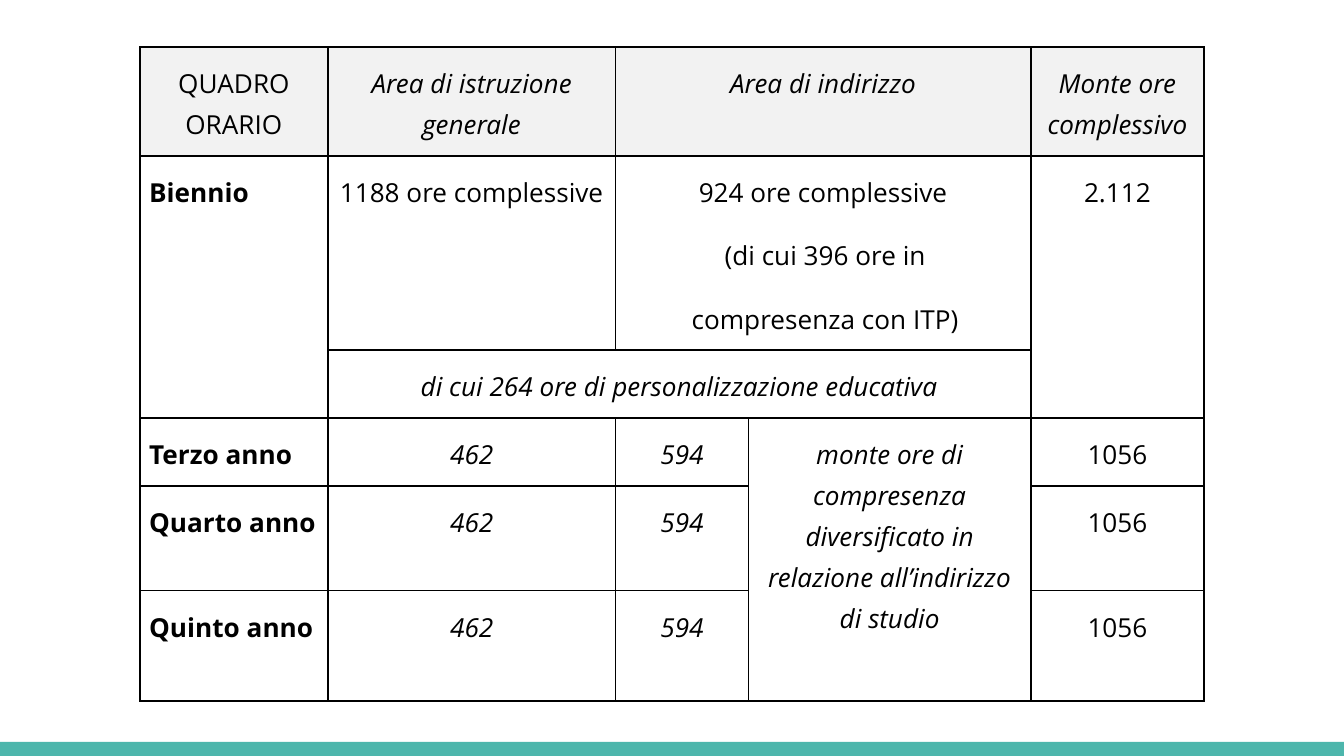
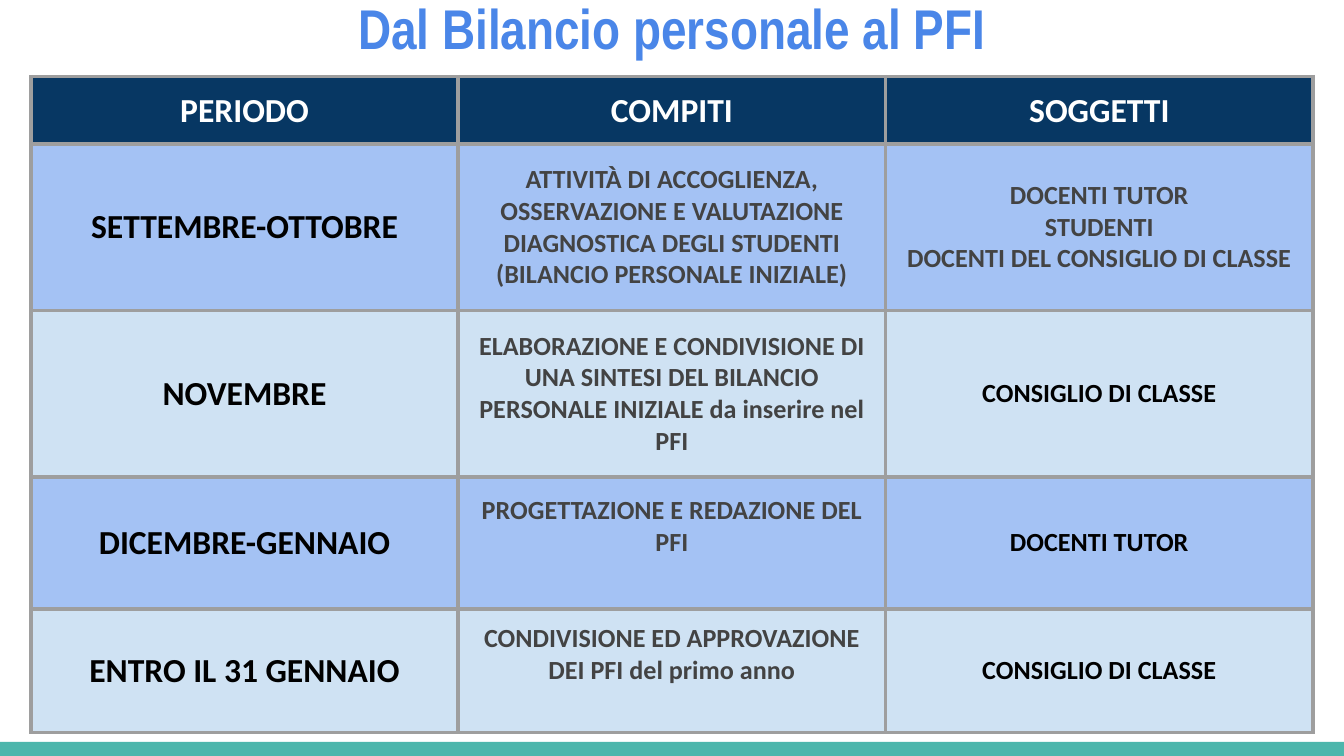
import pptx
import pptx.dml.color
import pptx.enum.shapes
import pptx.enum.text
import pptx.oxml
import pptx.oxml.ns
import pptx.util
from lxml import etree

Inches = pptx.util.Inches
Pt = pptx.util.Pt
PP_ALIGN = pptx.enum.text.PP_ALIGN
MSO_ANCHOR = pptx.enum.text.MSO_ANCHOR

BLACK = "000000"
WHITE = "FFFFFF"
TEAL = "4DB6AC"
TITLE_BLUE = "4A86E8"
NAVY = "073763"
GREY_TEXT = "434343"
GREY_LINE = "9E9E9E"
HEADER_GREY = "F2F2F2"
ROW_TINTS = ["A4C2F4", "CFE2F3"]
LINE_14PT = 0.24

HOURS_COLUMNS = [1.4, 2.14, 0.99, 2.1, 1.29]
HOURS_ROWS = [0.78, 1.41, 0.49, 0.49, 0.78, 0.82]
HOURS_MERGES = [(0, 2, 0, 3), (1, 0, 2, 0), (1, 2, 1, 3), (1, 4, 2, 4), (2, 1, 2, 3), (3, 3, 5, 3)]
HOURS_HEADERS = {
    0: "QUADRO ORARIO",
    1: "Area di istruzione generale",
    2: "Area di indirizzo",
    4: "Monte ore complessivo",
}
HOURS_BIENNIO = {
    0: "Biennio",
    1: "1188 ore complessive",
    2: "924 ore complessive\n(di cui 396 ore in\ncompresenza con ITP)",
    4: "2.112",
}
YEARS = ["Terzo anno", "Quarto anno", "Quinto anno"]
SHARED_HOURS = "monte ore di compresenza diversificato in relazione all’indirizzo di studio"

PLAN_ROWS = [0.37, 1.24, 1.24, 0.98, 0.92]
PLAN_HEADERS = ["PERIODO", "COMPITI", "SOGGETTI"]
PLAN = [
    (
        "SETTEMBRE-OTTOBRE",
        "ATTIVITÀ DI ACCOGLIENZA, OSSERVAZIONE E VALUTAZIONE DIAGNOSTICA DEGLI STUDENTI\n"
        "(BILANCIO PERSONALE INIZIALE)",
        "DOCENTI TUTOR\nSTUDENTI\nDOCENTI DEL CONSIGLIO DI CLASSE",
    ),
    (
        "NOVEMBRE",
        "ELABORAZIONE E CONDIVISIONE DI UNA SINTESI DEL BILANCIO PERSONALE INIZIALE da inserire nel PFI",
        "CONSIGLIO DI CLASSE",
    ),
    ("DICEMBRE-GENNAIO", "PROGETTAZIONE E REDAZIONE DEL PFI", "DOCENTI TUTOR"),
    (
        "ENTRO IL 31 GENNAIO",
        "CONDIVISIONE ED APPROVAZIONE DEI PFI del primo anno",
        "CONSIGLIO DI CLASSE",
    ),
]


def rgb(color):
    return pptx.dml.color.RGBColor.from_string(color)


def write(frame, text, font="Calibri", size=14, color=BLACK, bold=False, italic=False,
          align=PP_ALIGN.CENTER, spacing=1.0, gap=0, indent=0):
    for index, line in enumerate(text.split("\n")):
        paragraph = frame.add_paragraph() if index else frame.paragraphs[0]
        paragraph.alignment = align
        paragraph.line_spacing = spacing
        paragraph.space_before = Pt(gap if index else 0)
        if index and indent:
            paragraph._p.get_or_add_pPr().set("indent", str(Inches(indent)))
        run = paragraph.add_run()
        run.text = line
        run.font.name = font
        run.font.size = Pt(size)
        run.font.bold = bold
        run.font.italic = italic
        run.font.color.rgb = rgb(color)


def add_slide(deck):
    slide = deck.slides.add_slide(deck.slide_layouts[6])
    band = slide.shapes.add_shape(
        pptx.enum.shapes.MSO_SHAPE.RECTANGLE, 0, Inches(5.52), deck.slide_width, Inches(0.11))
    band.shadow.inherit = False
    band.fill.solid()
    band.fill.fore_color.rgb = rgb(TEAL)
    band.line.fill.background()
    return slide


def add_title(slide, text):
    title = slide.shapes.add_textbox(Inches(0.34), Inches(-0.09), Inches(9.32), Inches(0.57))
    frame = title.text_frame
    frame.word_wrap = True
    frame.margin_top = frame.margin_bottom = Inches(0.1)
    write(frame, text, font="Arial Narrow", size=30, color=TITLE_BLUE, bold=True, spacing=0.9)


def add_borders(cell, color, width):
    properties = cell._tc.get_or_add_tcPr()
    for side in ("a:lnL", "a:lnR", "a:lnT", "a:lnB"):
        edge = etree.SubElement(properties, pptx.oxml.ns.qn(side), w=str(Pt(width)))
        fill = etree.SubElement(edge, pptx.oxml.ns.qn("a:solidFill"))
        etree.SubElement(fill, pptx.oxml.ns.qn("a:srgbClr"), val=color)


def add_grid(slide, left, top, columns, rows, border, merges=(), side_margin=0.1):
    table = slide.shapes.add_table(
        len(rows), len(columns), Inches(left), Inches(top),
        Inches(sum(columns)), Inches(sum(rows))).table
    table.first_row = table.horz_banding = False
    for column, width in zip(table.columns, columns):
        column.width = Inches(width)
    for row, height in zip(table.rows, rows):
        row.height = Inches(height)
    for first_row, first_column, last_row, last_column in merges:
        table.cell(first_row, first_column).merge(table.cell(last_row, last_column))
    for cell in table.iter_cells():
        cell.margin_left = cell.margin_right = Inches(side_margin)
        cell.margin_top = cell.margin_bottom = Inches(0.1)
        if not cell.is_spanned:
            add_borders(cell, *border)
        cell.fill.background()
    return table


def tint(cell, color):
    cell.fill.solid()
    cell.fill.fore_color.rgb = rgb(color)


def build_hours(deck):
    table = add_grid(add_slide(deck), 1.04, 0.35, HOURS_COLUMNS, HOURS_ROWS,
                     (BLACK, 1), HOURS_MERGES, side_margin=0.07)

    def put(row, column, text, **style):
        write(table.cell(row, column).text_frame, text, font="Open Sans", spacing=1.15, **style)

    def put_label(row, text):
        put(row, 0, text, bold=True, align=PP_ALIGN.LEFT)

    for column, text in HOURS_HEADERS.items():
        put(0, column, text, italic=column > 0)
        tint(table.cell(0, column), HEADER_GREY)
    for column, text in HOURS_BIENNIO.items():
        if column:
            put(1, column, text, gap=12, indent=0.03)
        else:
            put_label(1, text)
    put(2, 1, "di cui 264 ore di personalizzazione educativa", italic=True)
    for row, year in enumerate(YEARS, start=3):
        put_label(row, year)
        put(row, 1, "462", italic=True)
        put(row, 2, "594", italic=True)
        put(row, 4, "1056")
    put(3, 3, SHARED_HOURS, italic=True)


def build_plan(deck):
    slide = add_slide(deck)
    add_title(slide, "Dal Bilancio personale al PFI")
    table = add_grid(slide, 0.23, 0.57, [3.18] * 3, PLAN_ROWS, (GREY_LINE, 2.25))
    for column, text in enumerate(PLAN_HEADERS):
        write(table.cell(0, column).text_frame, text, size=18, color=WHITE, bold=True)
        tint(table.cell(0, column), NAVY)
    for row, texts in enumerate(PLAN, start=1):
        for column, text in enumerate(texts):
            cell = table.cell(row, column)
            cell.vertical_anchor = MSO_ANCHOR.MIDDLE
            is_grey = column == 1 or (row == 1 and column == 2)
            write(cell.text_frame, text, size=14 if column else 18,
                  color=GREY_TEXT if is_grey else BLACK, bold=True)
            tint(cell, ROW_TINTS[(row - 1) % 2])
    for row in (3, 4):
        table.cell(row, 1).margin_bottom = Inches(0.1 + LINE_14PT)


def main():
    deck = pptx.Presentation()
    deck.slide_width = Inches(10)
    deck.slide_height = deck.slide_width * 9 // 16
    build_hours(deck)
    build_plan(deck)
    deck.save("out.pptx")


if __name__ == "__main__":
    main()
